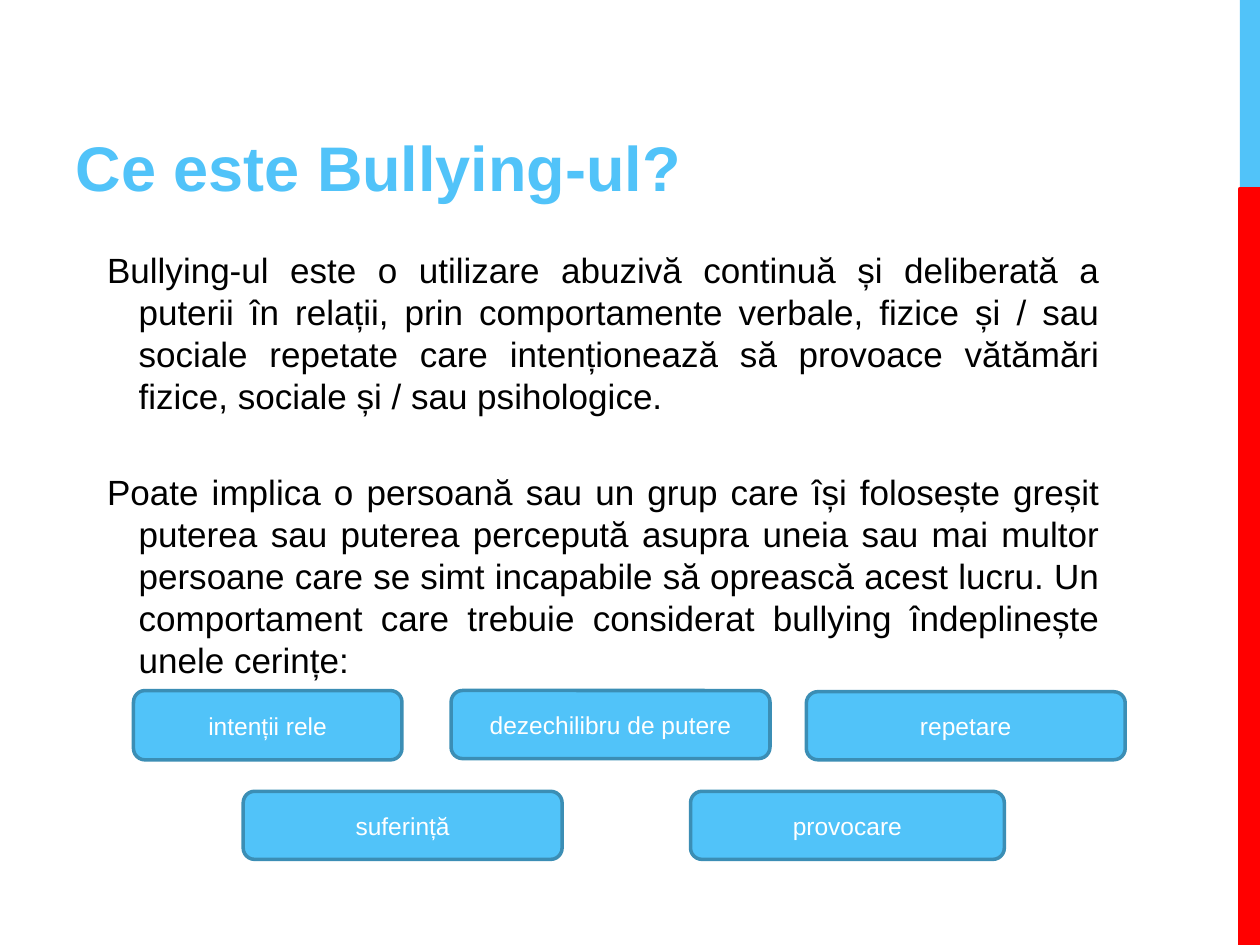
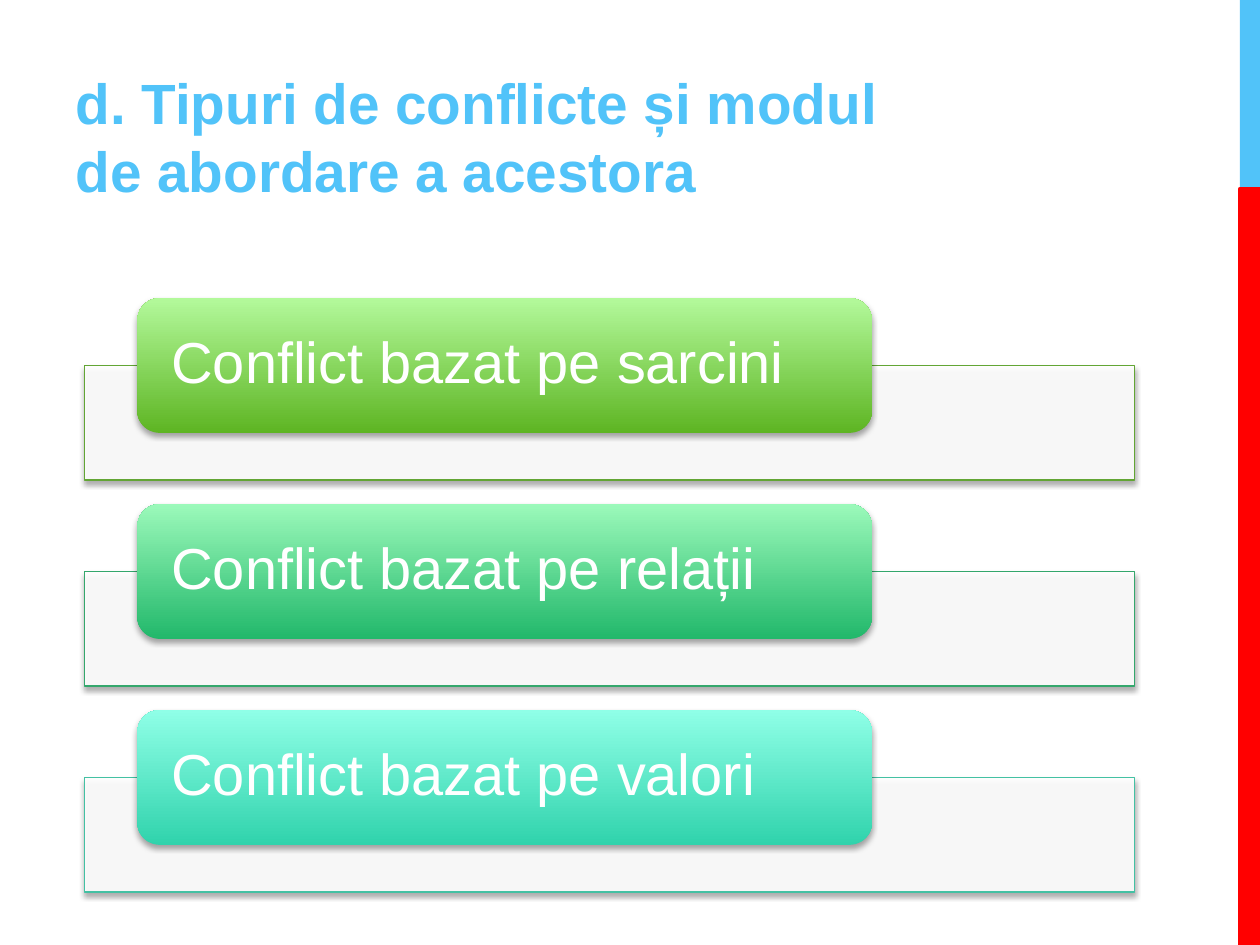
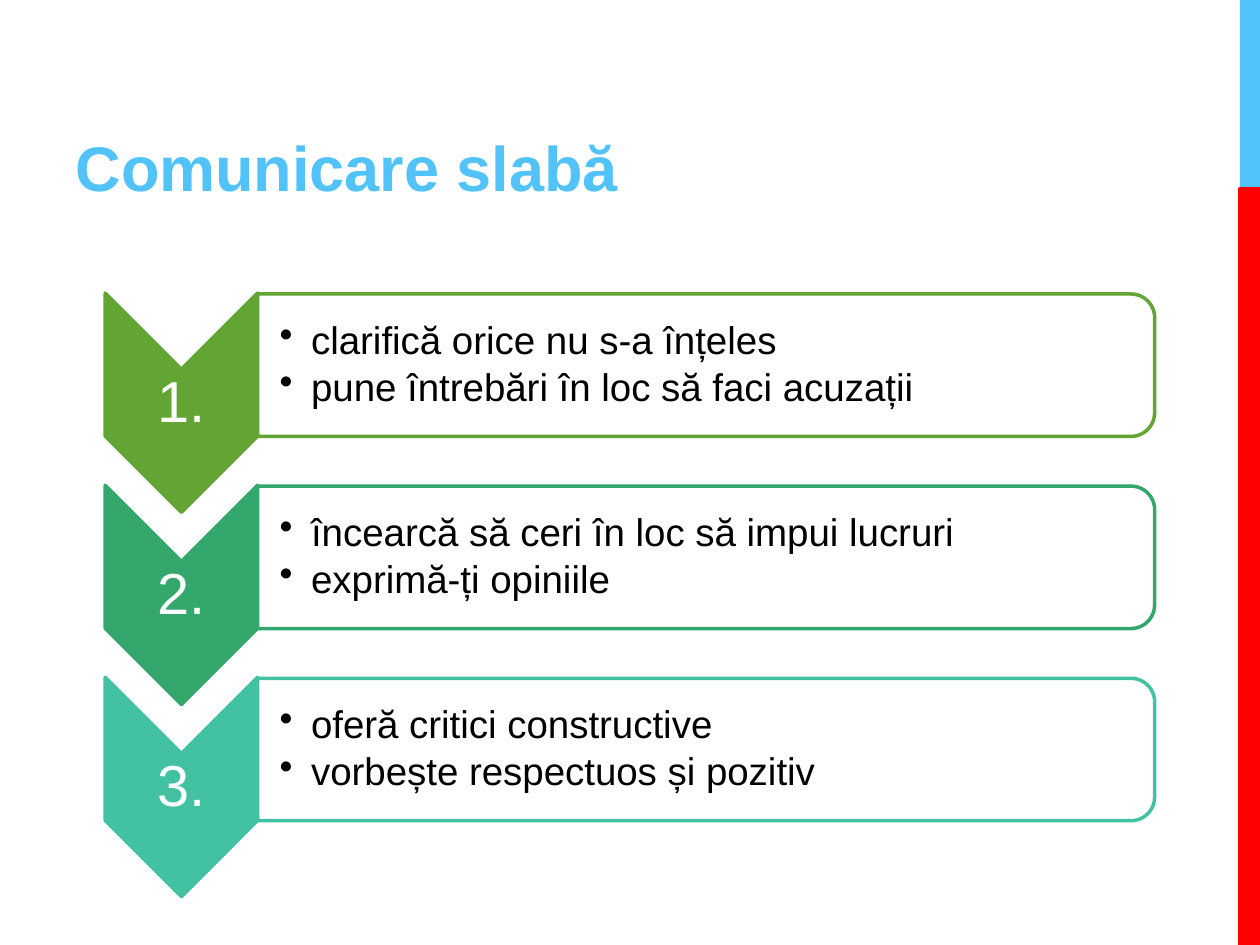
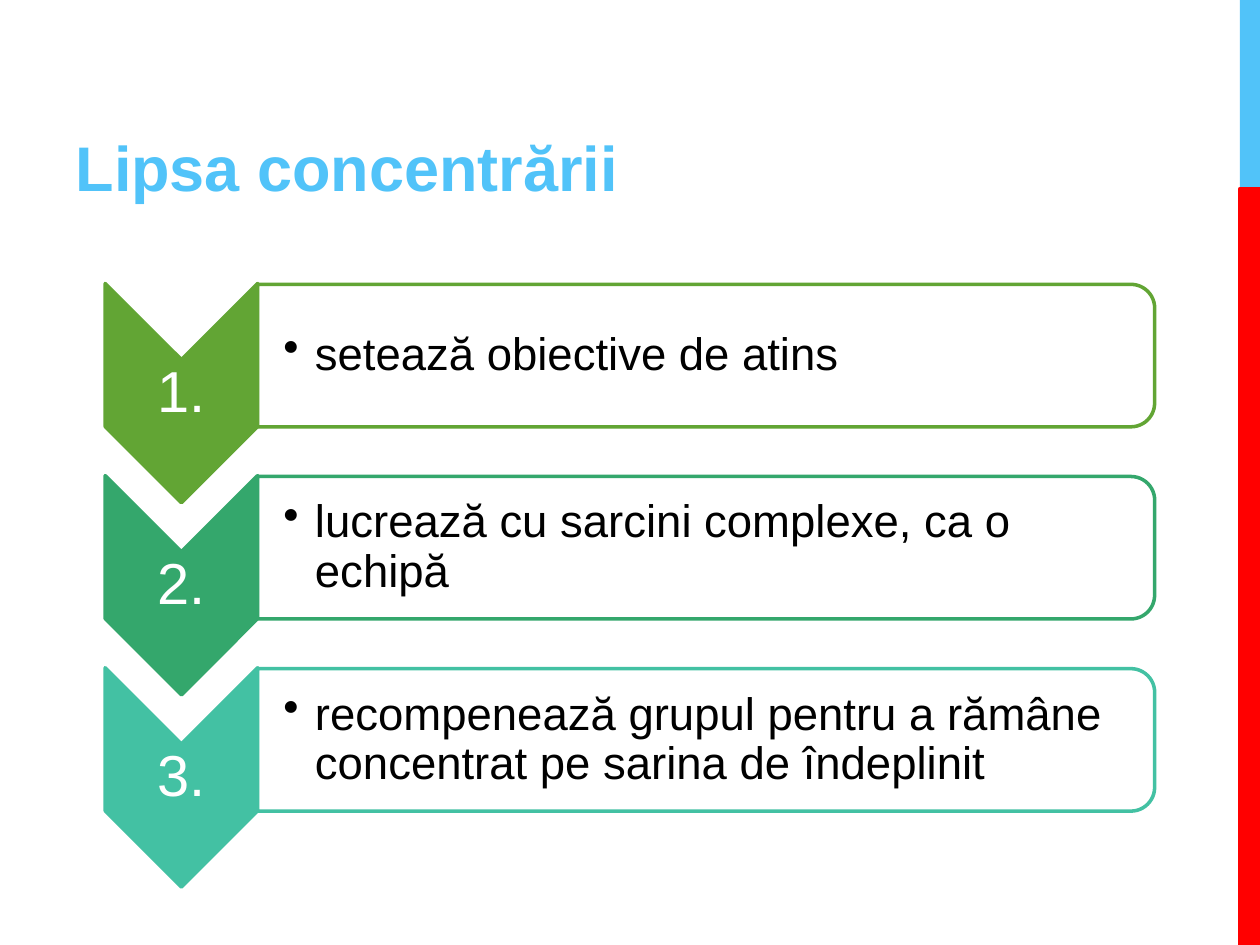
from lxml import etree
from pptx import Presentation
from pptx.dml.color import RGBColor
from pptx.enum.shapes import MSO_SHAPE as Preset
from pptx.enum.text import MSO_ANCHOR as Anchor, MSO_AUTO_SIZE as AutoSize, PP_ALIGN as Align
from pptx.oxml.ns import qn
from pptx.util import Pt

FONT = "Arial"
BLUE, BLUE_EDGE, RED = "51C3F9", "3B8EB5", "FF0000"
WHITE, BLACK = "FFFFFF", "000000"
ROW_COLOURS = ["62A534", "34A76C", "43C1A3"]
ROW_GRADIENTS = [("5EB523", "B3F99B"), ("22B86B", "9BF9BA"), ("30D3AC", "8FFFE7")]
TEXT_INSETS = (7.2, 3.6, 7.2, 3.6)
CONFLICT_PITCH = 117.7
STEP_PITCH = 109.8


def colour(value):
    return RGBColor.from_string(value)


def points(*values):
    return [Pt(value) for value in values]


def child(parent, tag, **attributes):
    return etree.SubElement(parent, qn(tag), {key: str(value) for key, value in attributes.items()})


def place(shape, left, top, width, height):
    shape.left, shape.top, shape.width, shape.height = points(left, top, width, height)


def set_frame(shape, insets, anchor):
    frame = shape.text_frame
    frame.word_wrap = True
    frame.auto_size = AutoSize.NONE
    frame.vertical_anchor = anchor
    frame.margin_left, frame.margin_top, frame.margin_right, frame.margin_bottom = points(*insets)
    return frame


def write(frame, lines, size, ink, align=Align.LEFT, bold=False, spacing=None, gap=0):
    """Fill a frame with one paragraph per line, gap points apart."""
    for index, line in enumerate(lines):
        para = frame.add_paragraph() if index else frame.paragraphs[0]
        para.alignment = align
        para.space_before = Pt(gap if index else 0)
        if spacing:
            para.line_spacing = spacing
        span = para.add_run()
        span.text = line
        span.font.name, span.font.size, span.font.bold = FONT, Pt(size), bold
        span.font.color.rgb = colour(ink)


def set_indent(para, margin, hanging, bullet=None):
    properties = para._p.get_or_add_pPr()
    properties.set("marL", str(Pt(margin)))
    properties.set("indent", str(-Pt(hanging)))
    if bullet:
        child(child(properties, "a:buClr"), "a:srgbClr", val=BLACK)
        child(properties, "a:buChar", char=bullet)
    else:
        child(properties, "a:buNone")


def add_preset(page, preset, frame, fill=None, line=None, weight=2):
    shape = page.shapes.add_shape(preset, *points(*frame))
    shape.shadow.inherit = False
    if fill:
        shape.fill.solid()
        shape.fill.fore_color.rgb = colour(fill)
    if line:
        shape.line.color.rgb = colour(line)
        shape.line.width = Pt(weight)
    else:
        shape.line.fill.background()
    return shape


def add_turned(page, preset, left, top, width, height, fill, line):
    """Add a shape turned by 90 degrees that covers the given frame."""
    shift = (width - height) / 2
    shape = add_preset(page, preset, (left + shift, top - shift, height, width), fill, line)
    shape.rotation = 90
    return shape


def add_label(page, frame, insets, lines, size, ink, **style):
    box = page.shapes.add_textbox(*points(*frame))
    write(set_frame(box, insets, Anchor.MIDDLE), lines, size, ink, spacing=0.9, **style)
    return box


def set_opacity(shape, percent):
    tint = shape._element.spPr.find(qn("a:solidFill"))[0]
    child(tint, "a:alpha", val=percent * 1000)


def add_shadow(shape):
    effects = shape._element.spPr.find(qn("a:effectLst"))
    shadow = child(effects, "a:outerShdw", blurRad=Pt(3.1), dist=Pt(1.8), dir=90 * 60000, rotWithShape=0)
    child(child(shadow, "a:srgbClr", val=BLACK), "a:alpha", val=35000)


def add_bands_to_master(deck, page):
    """Draw the right-hand bands once and hand them to the master."""
    upper = add_preset(page, Preset.RECTANGLE, (708.5, 0, 11.5, 108), BLUE)
    lower = add_preset(page, Preset.RECTANGLE, (708.5, 108, 11.5, 432), RED, RED, 2.25)
    for band in (upper, lower):
        deck.slide_master.shapes._spTree.append(band._element)


def add_page(deck, layout, title, width, size=36):
    page = deck.slides.add_slide(deck.slide_layouts.get_by_name(layout))
    place(page.shapes.title, 36, 12.2, width, 108)
    write(set_frame(page.shapes.title, TEXT_INSETS, Anchor.BOTTOM), [title], size, BLUE, bold=True)
    return page


def add_definition(page, lines):
    body = page.placeholders[1]
    place(body, 36, 138.2, 599.8, 344.2)
    frame = set_frame(body, TEXT_INSETS, Anchor.TOP)
    write(frame, lines, 20, BLACK, Align.JUSTIFY, gap=31.2)
    for para in frame.paragraphs:
        set_indent(para, 36, 18)


def add_criterion(page, text, frame):
    button = add_preset(page, Preset.ROUNDED_RECTANGLE, frame, BLUE, BLUE_EDGE)
    write(set_frame(button, TEXT_INSETS, Anchor.MIDDLE), [text], 14, WHITE, Align.CENTER)


def add_conflict(page, text, top, edge, gradient):
    bar = add_preset(page, Preset.RECTANGLE, (48.2, top + 38.4, 600, 65.5), WHITE, edge, 0.75)
    set_opacity(bar, 90)
    add_shadow(bar)
    tab = add_preset(page, Preset.ROUNDED_RECTANGLE, (78.5, top, 419.8, 77))
    tab.fill.gradient()
    tab.fill.gradient_angle = 90
    for stop, value in zip(tab.fill.gradient_stops, gradient):
        stop.color.rgb = colour(value)
    add_shadow(tab)
    add_label(page, (82.1, top + 3.6, 412.6, 69.1), (15.8, 0, 15.8, 0), [text], 33, WHITE)


def add_step(page, number, top, shade, lines, size, inset):
    chevron = add_turned(page, Preset.CHEVRON, 60.1, top, 87.1, 125.3, shade, shade)
    chevron.adjustments[0] = 0.5
    add_label(page, (60, top + 44.3, 87.1, 37.4), (1.4,) * 4, [f"{number}."], 33, WHITE, align=Align.CENTER)
    panel = add_turned(page, Preset.ROUND_2_SAME_RECTANGLE, 147.2, top + 0.5, 512.6, 81.4, WHITE, shade)
    set_opacity(panel, 90)
    box = add_label(page, (147.6, top + 4.5, 508.3, 73.4), (inset, 1.4, 1.4, 1.4), lines, size, BLACK, gap=3.3)
    for para in box.text_frame.paragraphs:
        set_indent(para, 18, 18, "•")


def add_steps(page, top, steps, size, inset):
    for index, (shade, lines) in enumerate(zip(ROW_COLOURS, steps)):
        add_step(page, index + 1, top + index * STEP_PITCH, shade, lines, size, inset)


def main():
    deck = Presentation()
    deck.slide_width, deck.slide_height = points(720, 540)

    page = add_page(deck, "Title and Content", "Ce este Bullying-ul?", 455.8)
    add_bands_to_master(deck, page)
    add_definition(page, [
        "Bullying-ul este o utilizare abuzivă continuă și deliberată a puterii în relații, prin "
        "comportamente verbale, fizice și / sau sociale repetate care intenționează să provoace "
        "vătămări fizice, sociale și / sau psihologice.",
        "Poate implica o persoană sau un grup care își folosește greșit puterea sau puterea "
        "percepută asupra uneia sau mai multor persoane care se simt incapabile să oprească "
        "acest lucru. Un comportament care trebuie considerat bullying îndeplinește unele cerințe:",
    ])
    criteria = [
        ("intenții rele", (76.3, 394.6, 153.4, 39.6)),
        ("dezechilibru de putere", (257.8, 394.6, 182.2, 38.9)),
        ("repetare", (460.8, 395.3, 182.2, 38.9)),
        ("suferință", (139, 452.2, 182.2, 38.9)),
        ("provocare", (394.6, 452.2, 179.3, 38.9)),
    ]
    for text, frame in criteria:
        add_criterion(page, text, frame)

    page = add_page(deck, "Title Only", "d. Tipuri de conflicte și modul de abordare a acestora", 489.6, 32.4)
    for index, basis in enumerate(["sarcini", "relații", "valori"]):
        add_conflict(page, f"Conflict bazat pe {basis}", 170.4 + index * CONFLICT_PITCH,
                     ROW_COLOURS[index], ROW_GRADIENTS[index])

    page = add_page(deck, "Title Only", "Comunicare slabă", 505.4)
    add_steps(page, 167.5, [
        ["clarifică orice nu s-a înțeles", "pune întrebări în loc să faci acuzații"],
        ["încearcă să ceri în loc să impui lucruri", "exprimă-ți opiniile"],
        ["oferă critici constructive", "vorbește respectuos și pozitiv"],
    ], 22, 12.2)

    page = add_page(deck, "Title Only", "Lipsa concentrării", 505.4)
    add_steps(page, 162, [
        ["setează obiective de atins"],
        ["lucrează cu sarcini complexe, ca o echipă"],
        ["recompenează grupul pentru a rămâne concentrat pe sarina de îndeplinit"],
    ], 26, 14.4)

    deck.save("out.pptx")


if __name__ == "__main__":
    main()
